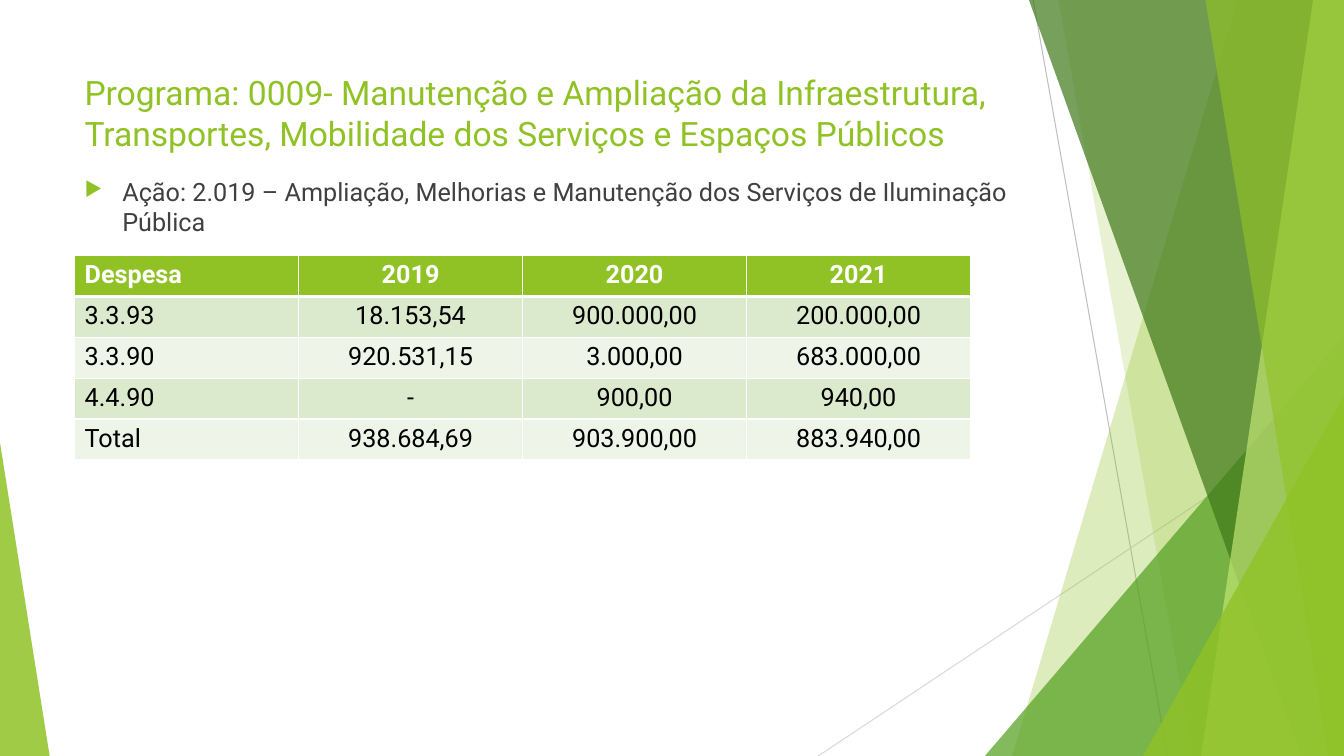
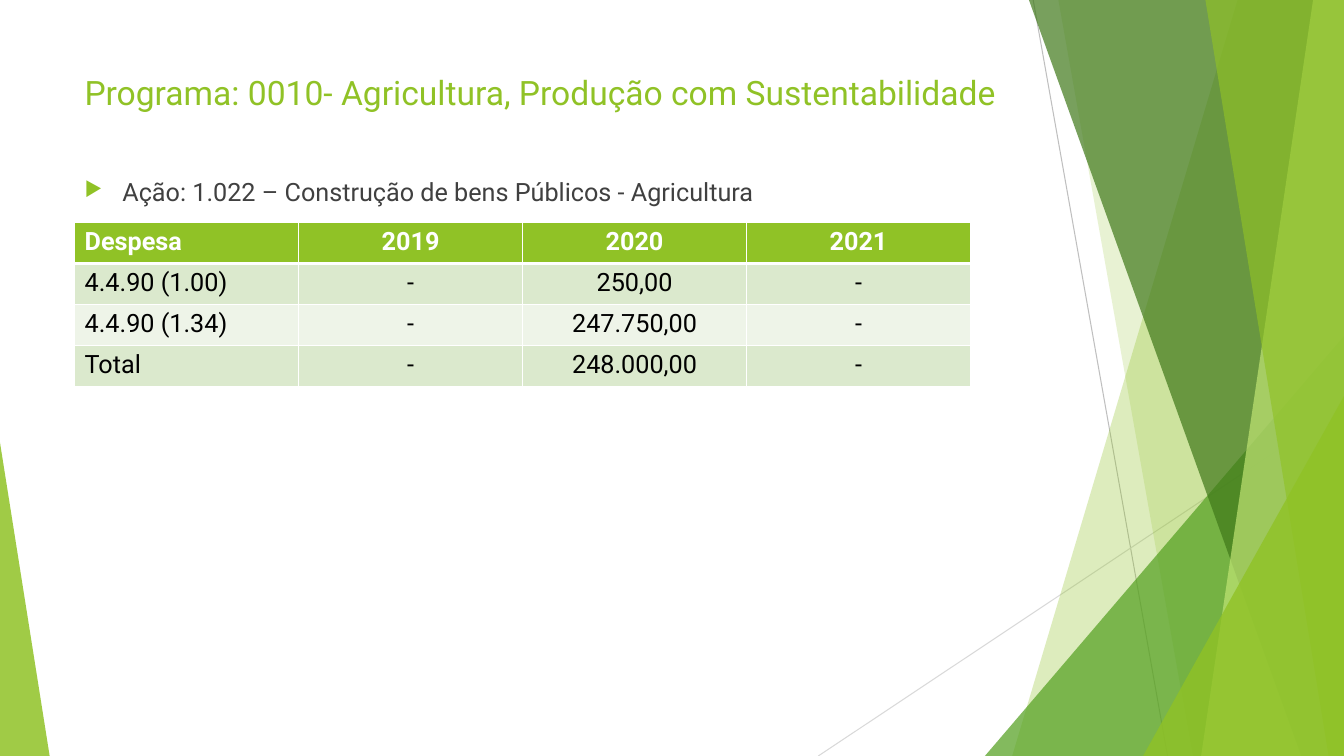
from lxml import etree
from pptx import Presentation
from pptx.dml.color import RGBColor
from pptx.enum import shapes, text
from pptx.oxml import ns
from pptx.util import Pt

FONT = "Roboto"
COLORS = {
    "lime": "90C226", "green": "54A021", "forest": "3F7819", "pale": "C0E474",
    "body": "404040", "black": "000000", "white": "FFFFFF",
    "band": "DBE9CD", "light": "EEF4E8", "gray": "BFBFBF", "silver": "D9D9D9",
}
WIDTH, HEIGHT = 960, 540
LEFT, TEXT_WIDTH = 53.3, 677
COLUMN, ROW = 160, 29.2
HEADER = ("Despesa", "2019", "2020", "2021")

RAYS = [
    ((738, 0), (834, HEIGHT), "gray"),
    ((WIDTH, 290), (584.5, HEIGHT), "silver"),
]
DECOR = [
    ("pane", (884, 723), "lime", 30),
    ("pane", (756, 852), "lime", 20),
    ("triangle", (703.5, 240, WIDTH, 1), "green", 72),
    ("pane", (735, 929.5), "forest", 70),
    ("pane", (938, 858), "pale", 70),
    ("pane", (861, 949), "lime", 65),
    ("triangle", (816.5, 283, WIDTH, 1), "lime", 80),
    ("triangle", (0, 316, 35.5, 0), "lime", 85),
]
SLIDES = [
    {
        "title": "Programa: 0009- Manutenção e Ampliação da Infraestrutura, "
                 "Transportes, Mobilidade dos Serviços e Espaços Públicos",
        "action": "Ação: 2.019 – Ampliação, Melhorias e Manutenção dos Serviços "
                  "de Iluminação Pública",
        "table_top": 182.5,
        "rows": [
            ("3.3.93", "18.153,54", "900.000,00", "200.000,00"),
            ("3.3.90", "920.531,15", "3.000,00", "683.000,00"),
            ("4.4.90", "-", "900,00", "940,00"),
            ("Total", "938.684,69", "903.900,00", "883.940,00"),
        ],
    },
    {
        "title": "Programa: 0010- Agricultura, Produção com Sustentabilidade",
        "action": "Ação: 1.022 – Construção de bens Públicos - Agricultura",
        "table_top": 159,
        "rows": [
            ("4.4.90 (1.00)", "-", "250,00", "-"),
            ("4.4.90 (1.34)", "-", "247.750,00", "-"),
            ("Total", "-", "248.000,00", "-"),
        ],
    },
]


def rgb(name):
    return RGBColor.from_string(COLORS[name])


def add_child(parent, tag, **attributes):
    child = etree.SubElement(parent, ns.qn(tag))
    for key, value in attributes.items():
        child.set(key, str(value))
    return child


def write(frame, content, size=18, color="black", bold=False, align=None):
    frame.word_wrap = True
    para = frame.paragraphs[0]
    para.alignment = align
    span = para.add_run()
    span.text = content
    span.font.name = FONT
    span.font.size = Pt(size)
    span.font.bold = bold
    span.font.color.rgb = rgb(color)
    return para


def add_text(page, top, height, content, **style):
    box = page.shapes.add_textbox(Pt(LEFT), Pt(top), Pt(TEXT_WIDTH), Pt(height))
    return write(box.text_frame, content, **style)


def add_bullet(para):
    para.space_before = Pt(10)
    props = para._p.get_or_add_pPr()
    props.set("marL", str(Pt(27)))
    props.set("indent", str(-Pt(27)))
    add_child(add_child(props, "a:buClr"), "a:srgbClr", val=COLORS["lime"])
    add_child(props, "a:buSzPct", val=80000)
    add_child(props, "a:buChar", char="▶")


def add_ray(page, start, end, color):
    ray = page.shapes.add_connector(
        shapes.MSO_CONNECTOR.STRAIGHT, *(Pt(value) for value in start + end))
    ray.line.color.rgb = rgb(color)
    ray.line.width = Pt(0.75)
    add_child(ray._element.spPr, "a:effectLst")


def add_pane(page, top_x, bottom_x):
    builder = page.shapes.build_freeform(Pt(top_x), 0, scale=1)
    corners = [(WIDTH, 0), (WIDTH, HEIGHT), (bottom_x, HEIGHT)]
    builder.add_line_segments([(Pt(x), Pt(y)) for x, y in corners], close=True)
    return builder.convert_to_shape()


def add_triangle(page, left, top, right, apex):
    triangle = page.shapes.add_shape(
        shapes.MSO_SHAPE.ISOSCELES_TRIANGLE,
        Pt(left), Pt(top), Pt(right - left), Pt(HEIGHT - top))
    triangle.adjustments[0] = apex
    return triangle


def add_decor(page):
    for ray in RAYS:
        add_ray(page, *ray)
    makers = {"pane": add_pane, "triangle": add_triangle}
    for kind, place, color, opacity in DECOR:
        shape = makers[kind](page, *place)
        shape.shadow.inherit = False
        shape.line.fill.background()
        shape.fill.solid()
        shape.fill.fore_color.rgb = rgb(color)
        tint = shape._element.spPr.find(".//" + ns.qn("a:srgbClr"))
        add_child(tint, "a:alpha", val=opacity * 1000)


def style_cell(cell, fill, bottom):
    props = cell._tc.get_or_add_tcPr()
    for side, width in (("L", 1), ("R", 1), ("T", 1), ("B", bottom)):
        border = add_child(props, "a:ln" + side, w=Pt(width))
        add_child(add_child(border, "a:solidFill"), "a:srgbClr", val=COLORS["white"])
    cell.fill.solid()
    cell.fill.fore_color.rgb = rgb(fill)


def add_expenses(page, top, rows):
    lines = [HEADER] + rows
    table = page.shapes.add_table(
        len(lines), len(HEADER), Pt(LEFT), Pt(top),
        Pt(COLUMN * len(HEADER)), Pt(ROW * len(lines))).table
    for row, values in enumerate(lines):
        table.rows[row].height = Pt(ROW)
        head = row == 0
        fill = "lime" if head else ("light", "band")[row % 2]
        for column, value in enumerate(values):
            cell = table.cell(row, column)
            style_cell(cell, fill, bottom=3 if head else 1)
            if row == 1:
                cell._tc.tcPr.find(ns.qn("a:lnT")).set("w", str(Pt(3)))
            write(cell.text_frame, value, bold=head,
                  color="white" if head else "black",
                  align=text.PP_ALIGN.CENTER if column else text.PP_ALIGN.LEFT)


def main():
    deck = Presentation()
    deck.slide_width, deck.slide_height = Pt(WIDTH), Pt(HEIGHT)
    for content in SLIDES:
        page = deck.slides.add_slide(deck.slide_layouts[6])
        add_decor(page)
        add_text(page, 48, 75, content["title"], size=24, color="lime")
        add_bullet(add_text(page, 122.5, 363, content["action"], color="body"))
        add_expenses(page, content["table_top"], content["rows"])
    deck.save("out.pptx")


if __name__ == "__main__":
    main()
